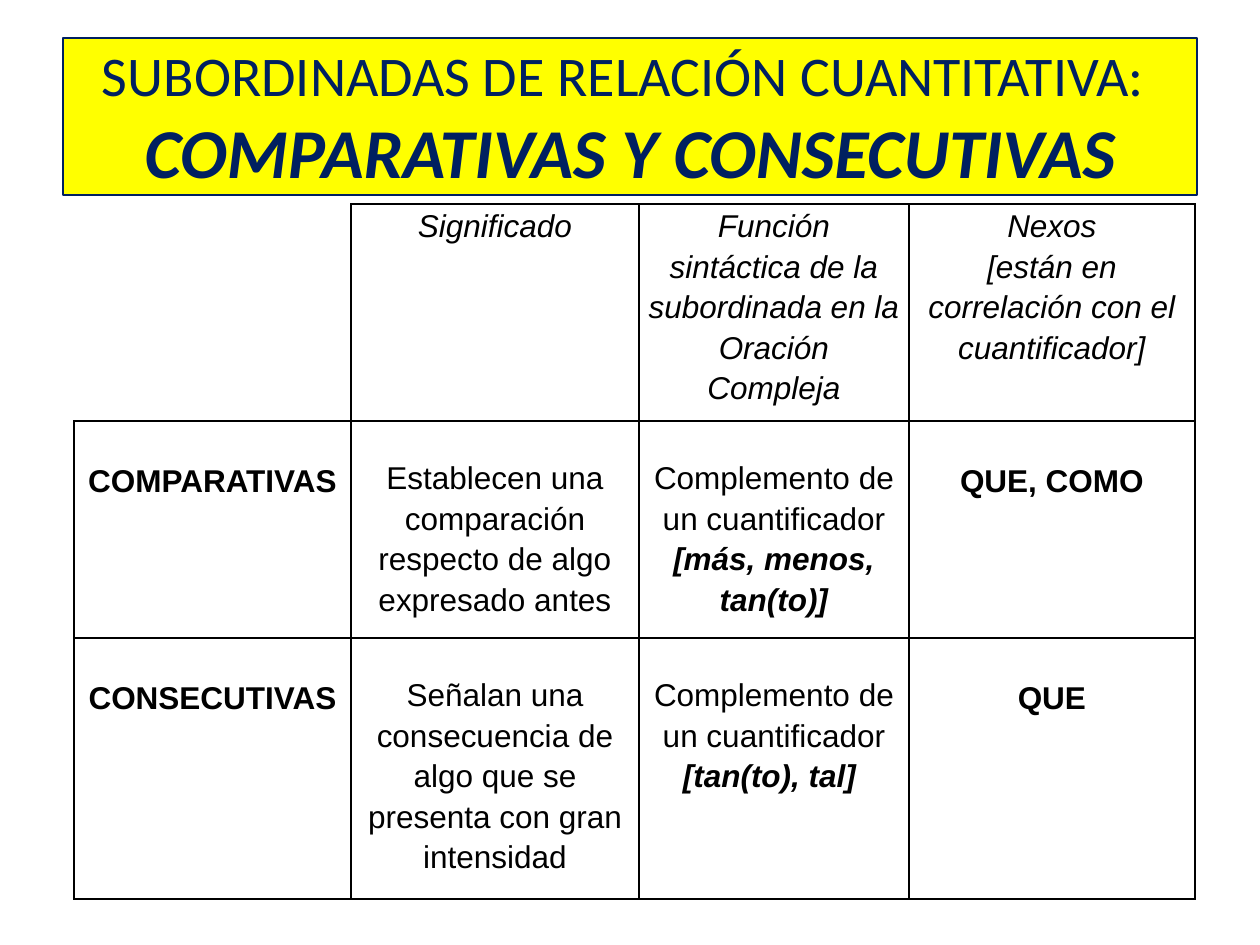
from lxml.etree import SubElement
from pptx import Presentation
from pptx.dml.color import RGBColor
from pptx.enum.text import MSO_ANCHOR as Anchor, MSO_AUTO_SIZE as AutoSize, PP_ALIGN as Align
from pptx.oxml.ns import qn
from pptx.util import Pt

SCALE = 914400 / 126  # EMU per px


def px(length):
    return round(length * SCALE)


def color(code):
    return RGBColor.from_string(code)


deck = Presentation()
deck.slide_width, deck.slide_height = px(1260), px(945)
page = deck.slides.add_slide(deck.slide_layouts[5])

# Title banner
title = page.shapes.title
title.left, title.top, title.width, title.height = px(63), px(38), px(1134), px(157)
title.fill.solid()
title.fill.fore_color.rgb = color("FFFF00")
title.line.color.rgb = color("002060")
title.line.width = Pt(0.75)
frame = title.text_frame
frame.text = "SUBORDINADAS DE RELACIÓN CUANTITATIVA: \vCOMPARATIVAS Y CONSECUTIVAS"
frame.auto_size = AutoSize.NONE
frame.word_wrap = True
frame.vertical_anchor = Anchor.MIDDLE
para = frame.paragraphs[0]
para.alignment = Align.CENTER
for span, size, strong in zip(para.runs, (32, 40), (False, True)):
    span.font.name = "Calibri"
    span.font.size = Pt(size)
    span.font.bold = span.font.italic = strong
    span.font.color.rgb = color("002060")

# Table content: one list of (text, bold, italic) paragraphs per cell
rows = [
    [
        [],
        [("Significado", False, True)],
        [("Función sintáctica de la subordinada en la Oración Compleja", False, True)],
        [("Nexos", False, True),
         ("[están en correlación con el cuantificador]", False, True)],
    ],
    [
        [("COMPARATIVAS", True, False)],
        [("Establecen una comparación respecto de algo expresado antes", False, False)],
        [("Complemento de un cuantificador", False, False),
         ("[más, menos, tan(to)]", True, True)],
        [("QUE, COMO", True, False)],
    ],
    [
        [("CONSECUTIVAS", True, False)],
        [("Señalan una consecuencia de algo que se presenta con gran intensidad", False, False)],
        [("Complemento de un cuantificador", False, False),
         ("[tan(to), tal] ", True, True)],
        [("QUE", True, False)],
    ],
]
widths = (277, 288, 270, 286)
heights = (217, 217, 261)

table = page.shapes.add_table(
    3, 4, px(74), px(204), px(sum(widths)), px(sum(heights))).table
table.first_row = table.horz_banding = False
for column, width in zip(table.columns, widths):
    column.width = px(width)
for row, height in zip(table.rows, heights):
    row.height = px(height)

for r, row in enumerate(rows):
    for c, content in enumerate(row):
        cell = table.cell(r, c)

        # Borders: the empty corner keeps only its right and bottom sides
        properties = cell._tc.get_or_add_tcPr()
        for side in ("lnL", "lnR", "lnT", "lnB"):
            border = SubElement(properties, qn("a:" + side), w=str(Pt(1)))
            if content or side in ("lnR", "lnB"):
                fill = SubElement(border, qn("a:solidFill"))
                SubElement(fill, qn("a:srgbClr"), val="000000")
            else:
                SubElement(border, qn("a:noFill"))
        cell.fill.background()

        # Body rows start about one line lower
        cell.margin_left = cell.margin_right = px(9)
        cell.margin_bottom = 0
        cell.margin_top = 0
        if r > 0:
            cell.margin_top = px(38 if content[0][1] else 35)

        cell.text_frame.text = "\n".join(text for text, bold, italic in content)
        for para, (text, bold, italic) in zip(cell.text_frame.paragraphs, content):
            para.alignment = Align.CENTER
            para.line_spacing = 1.15
            font = para.runs[0].font
            font.name = "Arial"
            font.size = Pt(18)
            font.bold, font.italic = bold, italic
            font.color.rgb = color("000000")

deck.save("out.pptx")
